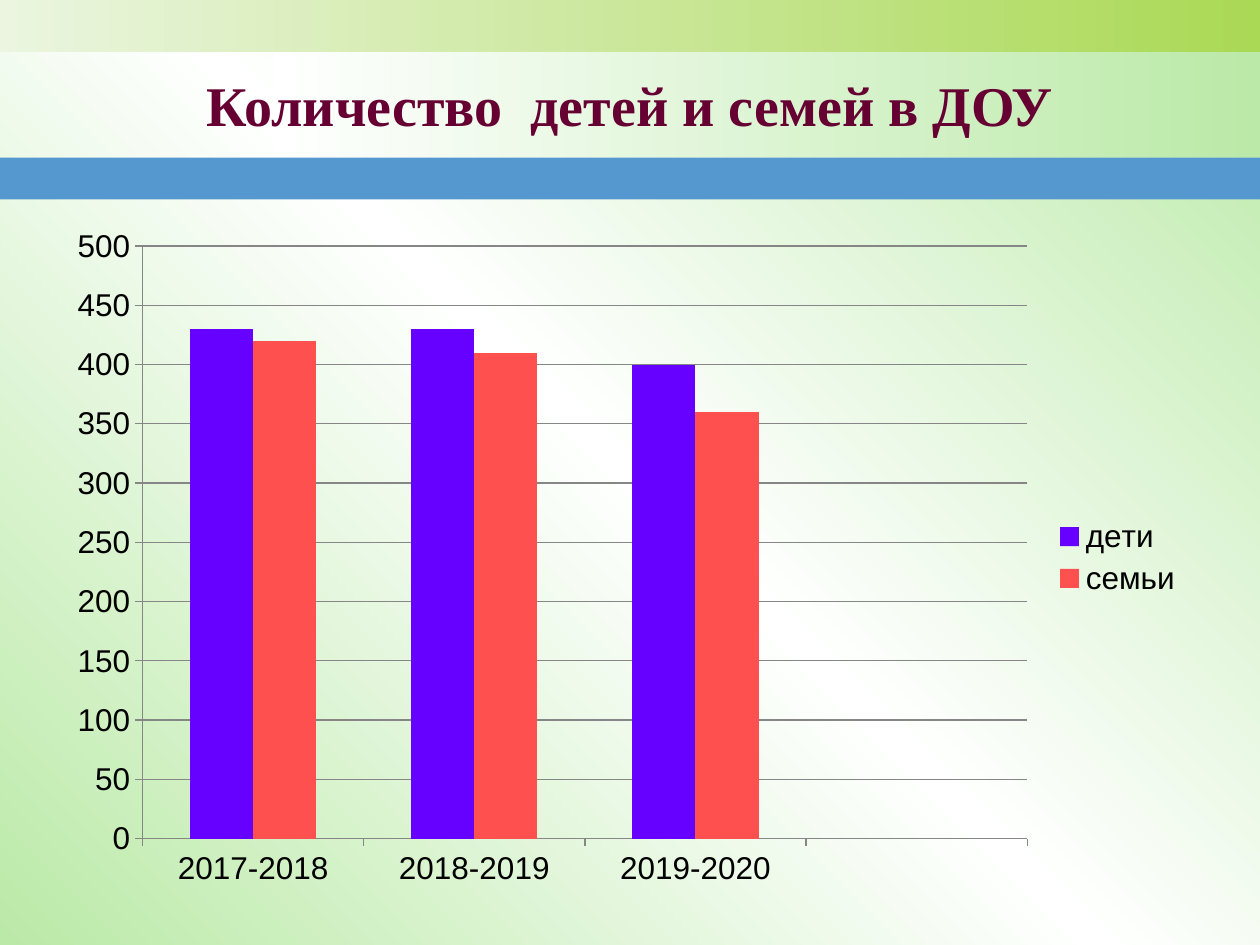
"""Build a slide comparing the number of children and families by school year."""
import copy

import pptx
import pptx.chart.data
import pptx.dml.color
import pptx.enum.chart
import pptx.enum.shapes
import pptx.enum.text
import pptx.oxml
import pptx.oxml.ns
import pptx.util

THEME = {
    "mint": "BBEAA8", "white": "FFFFFF", "pale": "EBF5DF", "lime": "AAD955",
    "blue": "5598CF", "title": "660033", "text": "000000", "lines": "868686",
    "children": "6600FF", "families": "FF5050",
    "title_font": "Times New Roman", "chart_font": "Arial",
    "title_size": 32, "chart_size": 18, "line_width": 0.75,
}


def color(name):
    return pptx.dml.color.RGBColor.from_string(THEME[name])


def set_gradient(fill, owner, names, angle):
    fill.gradient()
    fill.gradient_angle = angle
    stop_list = next(owner.iter(pptx.oxml.ns.qn("a:gsLst")))
    while len(stop_list) < len(names):
        stop_list.append(copy.deepcopy(stop_list[-1]))
    for index, (stop, name) in enumerate(zip(fill.gradient_stops, names)):
        stop.color.rgb = color(name)
        stop.position = index / (len(names) - 1)


deck = pptx.Presentation()
deck.slide_width, deck.slide_height = pptx.util.Inches(10), pptx.util.Inches(7.5)
column, row = deck.slide_width / 100, deck.slide_height / 18
page = deck.slides.add_slide(deck.slide_layouts[5])
set_gradient(page.background.fill, page.element, ["mint", "white", "mint"], 45)

bands = [
    (0, 0, 1, ["pale", "lime"]),
    (21.7, 1, 2, ["white", "mint"]),
    (0, 3, 0.8, ["blue"]),
]
for left, top, rows, names in bands:
    band = page.shapes.add_shape(
        pptx.enum.shapes.MSO_SHAPE.RECTANGLE,
        int(left * column), int(top * row), int((100 - left) * column), int(rows * row))
    band.shadow.inherit = False
    band.line.fill.background()
    if len(names) > 1:
        set_gradient(band.fill, band.element, names, 0)
    else:
        band.fill.solid()
        band.fill.fore_color.rgb = color(names[0])

title = page.shapes.title
title.element.getparent().append(title.element)
title.left, title.top = int(5 * column), int(row)
title.width, title.height = int(90 * column), int(1.97 * row)
title.text_frame.text = "Количество  детей и семей в ДОУ"
title.text_frame.vertical_anchor = pptx.enum.text.MSO_ANCHOR.MIDDLE
para = title.text_frame.paragraphs[0]
para.alignment = pptx.enum.text.PP_ALIGN.CENTER
para.font.name = THEME["title_font"]
para.font.size = pptx.util.Pt(THEME["title_size"])
para.font.bold = True
para.font.color.rgb = color("title")

data = pptx.chart.data.CategoryChartData()
data.categories = ["2017-2018", "2018-2019", "2019-2020", ""]
data.add_series("дети", [430, 430, 400, None])
data.add_series("семьи", [420, 410, 360, None])
chart = page.shapes.add_chart(
    pptx.enum.chart.XL_CHART_TYPE.COLUMN_CLUSTERED,
    int(4.3 * column), int(4.08 * row),
    int(90.6 * column), int(13.08 * row), data).chart
chart.has_title = False
chart.font.name = THEME["chart_font"]
chart.font.size = pptx.util.Pt(THEME["chart_size"])
chart.font.color.rgb = color("text")
chart.has_legend = True
chart.legend.position = pptx.enum.chart.XL_LEGEND_POSITION.RIGHT
chart.legend.include_in_layout = False

plot = chart.plots[0]
plot.vary_by_categories = False
plot.gap_width, plot.overlap = 150, 0
for series, name in zip(plot.series, ["children", "families"]):
    series.format.fill.solid()
    series.format.fill.fore_color.rgb = color(name)

values = chart.value_axis
values.minimum_scale, values.maximum_scale, values.major_unit = 0, 500, 50
values.has_major_gridlines = True
for axis in (chart.category_axis, values):
    axis.major_tick_mark = pptx.enum.chart.XL_TICK_MARK.OUTSIDE
for part in (chart.category_axis, values, values.major_gridlines):
    part.format.line.color.rgb = color("lines")
    part.format.line.width = pptx.util.Pt(THEME["line_width"])

area = next(chart.element.iter(pptx.oxml.ns.qn("c:plotArea")))
for layout in area.findall(pptx.oxml.ns.qn("c:layout")):
    area.remove(layout)
settings = [("layoutTarget", "inner"), ("xMode", "edge"), ("yMode", "edge"),
            ("x", 7.75 / 100), ("y", 4.65 / 100), ("w", 77.5 / 100), ("h", 86.3 / 100)]
items = "".join(f'<c:{tag} val="{value}"/>' for tag, value in settings)
area.insert(0, pptx.oxml.parse_xml(
    f'<c:layout {pptx.oxml.ns.nsdecls("c")}><c:manualLayout>{items}'
    "</c:manualLayout></c:layout>"))

deck.save("out.pptx")
